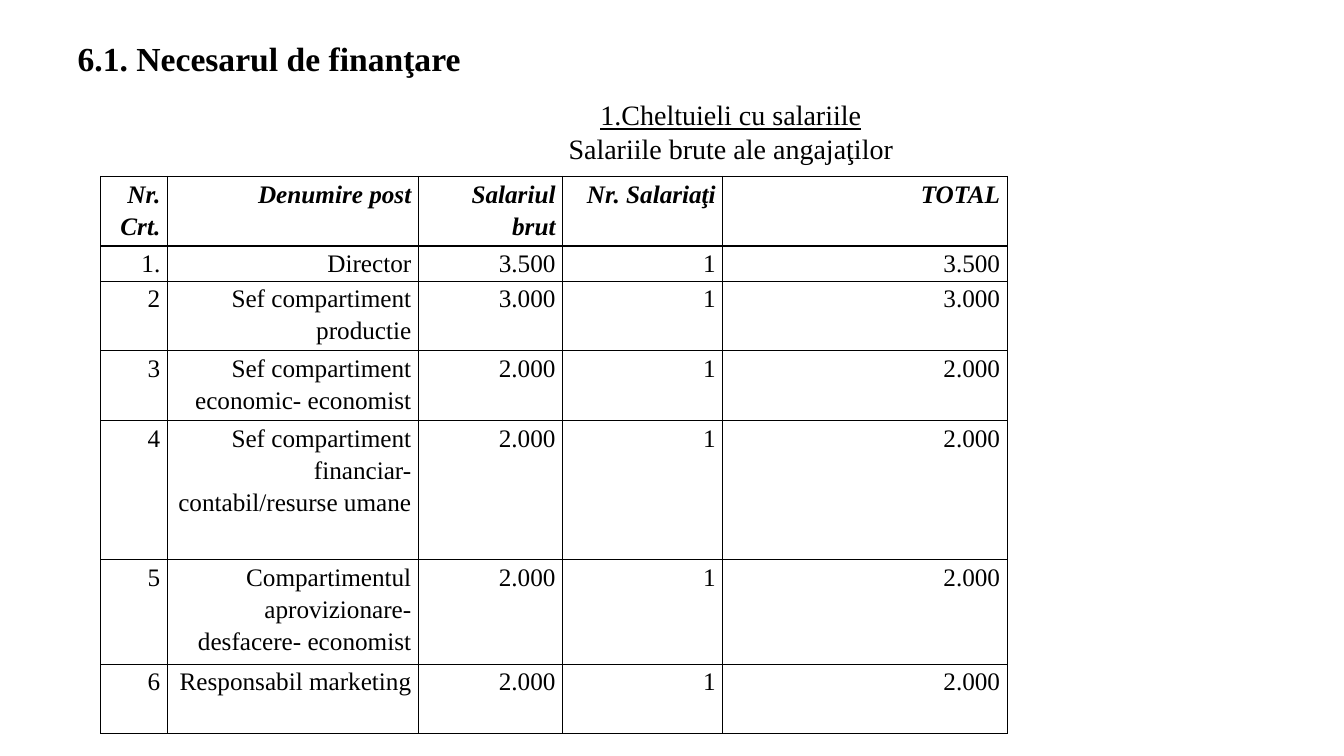
import pptx
import pptx.util
import pptx.dml.color
import pptx.enum.text
import pptx.oxml
import pptx.oxml.ns
from dataclasses import dataclass

Inches = pptx.util.Inches
Pt = pptx.util.Pt
ALIGN = pptx.enum.text.PP_ALIGN
ANCHOR = pptx.enum.text.MSO_ANCHOR


@dataclass
class Theme:
    font: str = "Times New Roman"
    ink: str = "000000"
    title: int = 24
    lead: int = 20
    cell: int = 18
    rule: int = 1


class Deck:
    def __init__(self, theme):
        self.theme = theme
        self.prs = pptx.Presentation()
        self.prs.slide_width = Inches(13.33)
        self.prs.slide_height = Inches(7.5)
        self.slide = self.prs.slides.add_slide(self.prs.slide_layouts[5])

    def style(self, para, size, align, bold=False, italic=False, under=False):
        para.alignment = align
        font = para.font
        font.name, font.size = self.theme.font, Pt(size)
        font.bold, font.italic, font.underline = bold, italic, under
        font.color.rgb = pptx.dml.color.RGBColor.from_string(self.theme.ink)

    def title(self, text, left, top, width, height):
        shape = self.slide.shapes.title
        shape.left, shape.top = Inches(left), Inches(top)
        shape.width, shape.height = Inches(width), Inches(height)
        frame = shape.text_frame
        frame.text = text
        frame.word_wrap = False
        frame.auto_size = pptx.enum.text.MSO_AUTO_SIZE.NONE
        frame.vertical_anchor = ANCHOR.TOP
        self.style(frame.paragraphs[0], self.theme.title, ALIGN.LEFT, bold=True)

    def lead(self, lines, left, top, width, height):
        box = self.slide.shapes.add_textbox(
            Inches(left), Inches(top), Inches(width), Inches(height))
        frame = box.text_frame
        frame.word_wrap = True
        frame.text = "\n".join(lines)
        for num, para in enumerate(frame.paragraphs):
            props = para._p.get_or_add_pPr()
            props.set("marL", str(Inches(1)))
            props.set("indent", str(Inches(0.5)))
            self.style(para, self.theme.lead, ALIGN.CENTER, under=num == 0)

    def border(self, cell):
        props = cell._tc.get_or_add_tcPr()
        for side in ("lnL", "lnR", "lnT", "lnB"):
            props.append(pptx.oxml.parse_xml(
                f'<a:{side} {pptx.oxml.ns.nsdecls("a")} w="{Pt(self.theme.rule)}">'
                f'<a:solidFill><a:srgbClr val="{self.theme.ink}"/></a:solidFill>'
                f'</a:{side}>'))

    def cell(self, cell, text, head):
        self.border(cell)
        cell.fill.background()
        cell.margin_left = cell.margin_right = Inches(0.07)
        cell.margin_top = cell.margin_bottom = 0
        cell.text = text
        para = cell.text_frame.paragraphs[0]
        para.line_spacing = 1.15
        self.style(para, self.theme.cell, ALIGN.RIGHT, bold=head, italic=head)

    def table(self, data, left, top, widths, heights):
        table = self.slide.shapes.add_table(
            len(data), len(widths), Inches(left), Inches(top),
            Inches(sum(widths)), Inches(sum(heights))).table
        table.first_row = table.horz_banding = False
        for col, width in zip(table.columns, widths):
            col.width = Inches(width)
        for num, (row, height) in enumerate(zip(table.rows, heights)):
            row.height = Inches(height)
            for cell, text in zip(row.cells, data[num]):
                self.cell(cell, text, num == 0)


def main():
    deck = Deck(Theme())

    # Headings
    deck.title("6.1. Necesarul de finanţare", 0.67, 0.33, 4.04, 0.5)
    deck.lead(["1.Cheltuieli cu salariile", "Salariile brute ale angajaţilor"],
              3.17, 0.92, 6.66, 0.77)

    # Salary table: one employee per post, so the total equals the salary
    posts = [
        ("1.", "Director", "3.500"),
        ("2", "Sef compartiment productie", "3.000"),
        ("3", "Sef compartiment economic- economist", "2.000"),
        ("4", "Sef compartiment financiar- contabil/resurse umane", "2.000"),
        ("5", "Compartimentul aprovizionare-desfacere- economist", "2.000"),
        ("6", "Responsabil marketing", "2.000"),
    ]
    data = [("Nr. Crt.", "Denumire post", "Salariul brut", "Nr. Salariaţi", "TOTAL")]
    data += [(num, post, pay, "1", pay) for num, post, pay in posts]
    deck.table(data, 1, 1.75, [0.66, 2.49, 1.43, 1.59, 2.82],
               [0.69, 0.35, 0.69, 0.69, 1.38, 1.04, 0.69])

    deck.prs.save("out.pptx")


if __name__ == "__main__":
    main()
